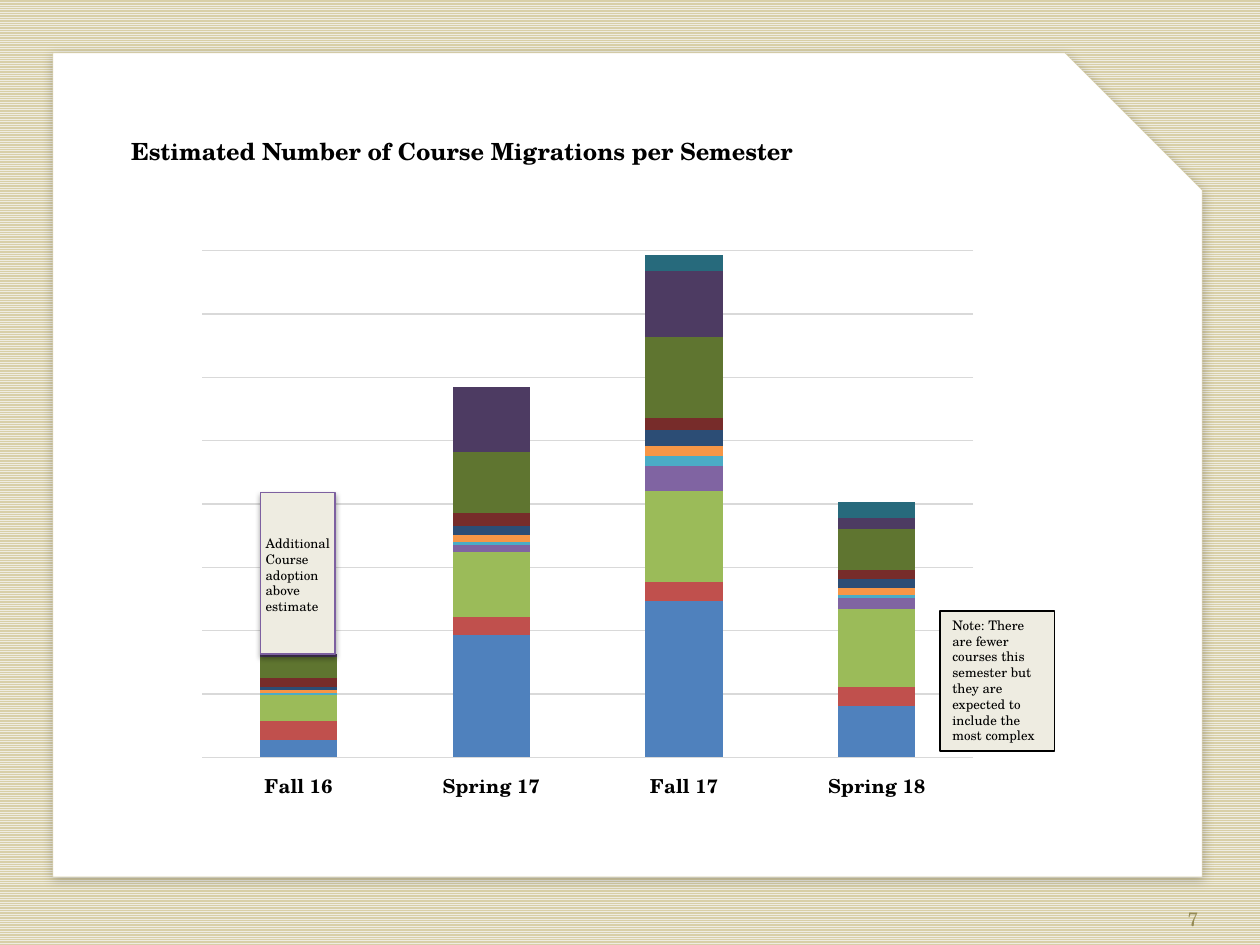
from typing import NamedTuple, Optional

from lxml import etree
from pptx import Presentation
from pptx.chart.data import CategoryChartData
from pptx.dml.color import RGBColor
from pptx.enum.chart import XL_CHART_TYPE as ChartType, XL_TICK_LABEL_POSITION as LabelPosition
from pptx.enum.chart import XL_TICK_MARK as TickMark
from pptx.enum.dml import MSO_PATTERN
from pptx.enum.shapes import MSO_SHAPE as Preset
from pptx.enum.text import MSO_ANCHOR as Anchor, PP_ALIGN as Align
from pptx.oxml import parse_xml
from pptx.oxml.ns import nsdecls, qn
from pptx.util import Inches, Pt

FONT = "TeX Gyre Schola"
BLACK, WHITE, CREAM, SAND, GRID = "000000", "FFFFFF", "EEECE1", "D8CFA7", "D9D9D9"


class Box(NamedTuple):
    left: float
    top: float
    width: float
    height: float

    def lengths(self):
        return [Inches(value) for value in self]


class Shadow(NamedTuple):
    opacity: int
    blur: float
    distance: float
    angle: int


class Panel(NamedTuple):
    preset: Preset
    box: Box
    fill: str
    line: str
    line_width: float
    shadow: Optional[Shadow] = None


class Series(NamedTuple):
    color: str
    values: tuple


SEMESTERS = ("Fall 16", "Spring 17", "Fall 17", "Spring 18")
COURSE_SERIES = (
    Series("4F81BD", (11, 78, 100, 33)),
    Series("C0504D", (12, 12, 12, 12)),
    Series("9BBB59", (17, 41, 58, 50)),
    Series("8064A2", (0, 5, 16, 7)),
    Series("4BACC6", (1, 2, 7, 2)),
    Series("F79646", (2, 4, 6, 4)),
    Series("2C4D75", (2, 6, 10, 6)),
    Series("772C2A", (6, 8, 8, 6)),
    Series("5F7530", (13, 39, 52, 26)),
    Series("4D3B62", (2, 42, 42, 7)),
    Series("276A7C", (None, None, 10, 10)),
)
CARD = Panel(Preset.SNIP_1_RECTANGLE, Box(0.42, 0.42, 9.12, 6.54), WHITE, SAND, 0.25,
             Shadow(22, 6, 2, 80))
ADOPTION = Panel(Preset.RECTANGLE, Box(2.07, 3.91, 0.59, 1.28), CREAM, "7D60A0", 0.75,
                 Shadow(35, 3.1, 1.8, 90))
NOTE = Panel(Preset.RECTANGLE, Box(7.46, 4.85, 0.91, 1.11), CREAM, BLACK, 0.75)


def rgb(color: str) -> RGBColor:
    return RGBColor.from_string(color)


def style_font(font, size: float, color: str = BLACK, bold: bool = False) -> None:
    font.name, font.size, font.bold = FONT, Pt(size), bold
    font.color.rgb = rgb(color)


def write(shape, text: str, size: float, color: str = BLACK, bold: bool = False,
          align=Align.LEFT, anchor=Anchor.TOP, wrap: bool = True) -> None:
    frame = shape.text_frame
    frame.text = text
    frame.word_wrap = wrap
    frame.vertical_anchor = anchor
    frame.paragraphs[0].alignment = align
    style_font(frame.paragraphs[0].font, size, color, bold)


def add_shadow(shape, shadow: Shadow) -> None:
    effects = shape._element.spPr.find(qn("a:effectLst"))
    effects.append(parse_xml(
        f'<a:outerShdw {nsdecls("a")} blurRad="{Pt(shadow.blur)}" dist="{Pt(shadow.distance)}" '
        f'dir="{shadow.angle * 60000}" rotWithShape="0"><a:srgbClr val="{BLACK}">'
        f'<a:alpha val="{shadow.opacity * 1000}"/></a:srgbClr></a:outerShdw>'))


def add_panel(slide, panel: Panel):
    shape = slide.shapes.add_shape(panel.preset, *panel.box.lengths())
    shape.fill.solid()
    shape.fill.fore_color.rgb = rgb(panel.fill)
    shape.line.color.rgb = rgb(panel.line)
    shape.line.width = Pt(panel.line_width)
    shape.shadow.inherit = False
    if panel.shadow:
        add_shadow(shape, panel.shadow)
    return shape


def place_plot(chart, plot_box: Box) -> None:
    """Fix the inner plot area, in fractions of the chart."""
    area = chart._chartSpace.chart.plotArea
    for old_layout in area.findall(qn("c:layout")):
        area.remove(old_layout)
    layout = etree.Element(qn("c:layout"))
    manual = etree.SubElement(layout, qn("c:manualLayout"))
    settings = [("layoutTarget", "inner"), ("xMode", "edge"), ("yMode", "edge"),
                *zip("xywh", plot_box)]
    for tag, value in settings:
        etree.SubElement(manual, qn(f"c:{tag}")).set("val", str(value))
    area.insert(0, layout)


def add_migration_chart(slide, box: Box) -> None:
    data = CategoryChartData(number_format="0")
    data.categories = SEMESTERS
    for number, series in enumerate(COURSE_SERIES, 1):
        data.add_series(f"Series {number}", series.values)
    chart = slide.shapes.add_chart(ChartType.COLUMN_STACKED, *box.lengths(), data).chart
    chart.has_title = chart.has_legend = False
    style_font(chart.font, 10)
    place_plot(chart, Box(0.063, 0.176, 0.908, 0.716))

    bars = chart.plots[0]
    bars.gap_width, bars.overlap, bars.vary_by_categories = 150, 100, False
    for bar, series in zip(bars.series, COURSE_SERIES):
        bar.format.fill.solid()
        bar.format.fill.fore_color.rgb = rgb(series.color)
        bar.invert_if_negative = False

    semesters, courses = chart.category_axis, chart.value_axis
    semesters.major_tick_mark = semesters.minor_tick_mark = TickMark.NONE
    semesters.tick_label_position = LabelPosition.LOW
    style_font(semesters.tick_labels.font, 11, bold=True)
    courses.minimum_scale, courses.maximum_scale, courses.major_unit = 0, 324, 40.5
    courses.has_major_gridlines = True
    courses.visible = False
    for line in (semesters.format.line, courses.major_gridlines.format.line):
        line.color.rgb = rgb(GRID)
        line.width = Pt(0.75)


def main() -> None:
    deck = Presentation()
    deck.slide_width, deck.slide_height = Inches(10), Inches(7.5)
    slide = deck.slides.add_slide(deck.slide_layouts[5])

    background = slide.background.fill
    background.patterned()
    background.pattern = MSO_PATTERN.NARROW_HORIZONTAL
    background.fore_color.rgb, background.back_color.rgb = rgb(CREAM), rgb(SAND)

    title = slide.shapes.title
    title.left, title.top, title.width, title.height = Box(0.94, 1.04, 5.48, 0.33).lengths()
    write(title, "Estimated Number of Course Migrations per Semester", 13.5, bold=True, wrap=False)

    card = add_panel(slide, CARD)
    title._element.addprevious(card._element)  # the card lies behind the title
    add_migration_chart(slide, Box(1.18, 1, 6.74, 5.62))

    page_number = slide.shapes.add_textbox(*Box(7.28, 7.09, 2.33, 0.4).lengths())
    write(page_number, "7", 11, "948A54", align=Align.RIGHT, anchor=Anchor.MIDDLE)

    add_panel(slide, ADOPTION)
    adoption_label = slide.shapes.add_textbox(*Box(2.01, 4.2, 0.72, 0.73).lengths())
    write(adoption_label, "Additional Course adoption above estimate", 7.5)

    note = add_panel(slide, NOTE)
    write(note, "Note: There are fewer courses this semester but they are expected to "
                "include the most complex", 7.5)

    deck.save("out.pptx")


if __name__ == "__main__":
    main()
